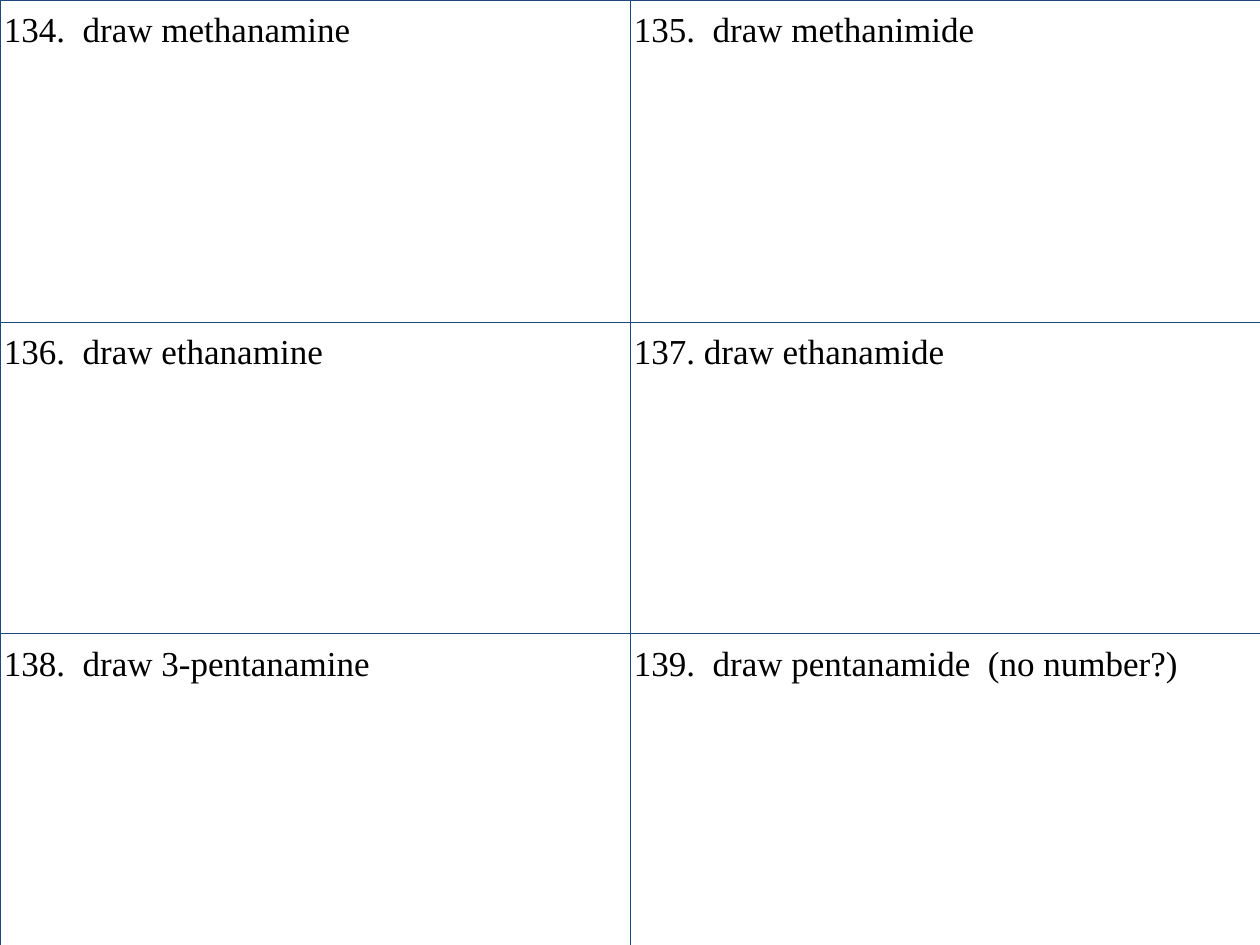
from lxml import etree
from pptx import Presentation
from pptx.dml.color import RGBColor
from pptx.oxml.ns import qn
from pptx.util import Inches, Pt

BLACK = RGBColor(0x00, 0x00, 0x00)
BORDER = RGBColor(0x1F, 0x49, 0x7D)

QUESTIONS = [
    ["134.  draw methanamine", "135.  draw methanimide"],
    ["136.  draw ethanamine", "137. draw ethanamide"],
    ["138.  draw 3-pentanamine", "139.  draw pentanamide  (no number?)"],
]
ROW_HEIGHTS = [2.56, 2.47, 2.47]


def set_borders(cell, color, width):
    tcPr = cell._tc.get_or_add_tcPr()
    for i, side in enumerate(("a:lnL", "a:lnR", "a:lnT", "a:lnB")):
        ln = etree.Element(qn(side), w=str(int(width)))
        fill = etree.SubElement(ln, qn("a:solidFill"))
        etree.SubElement(fill, qn("a:srgbClr"), val=str(color))
        tcPr.insert(i, ln)  # borders come before the cell fill


prs = Presentation()
prs.slide_width = Inches(10)
prs.slide_height = Inches(7.5)
s = prs.slides.add_slide(prs.slide_layouts[6])

table = s.shapes.add_table(3, 2, 0, 0, Inches(10), Inches(7.5)).table
table.first_row = False
table.horz_banding = False
for col in table.columns:
    col.width = Inches(5)

for row, height, questions in zip(table.rows, ROW_HEIGHTS, QUESTIONS):
    row.height = Inches(height)
    for cell, question in zip(row.cells, questions):
        cell.fill.background()
        set_borders(cell, BORDER, Pt(0.5))
        cell.margin_left = cell.margin_right = Inches(0.03)
        cell.margin_top = cell.margin_bottom = Inches(0.03)
        p = cell.text_frame.paragraphs[0]
        p.text = question
        p.line_spacing = 1.19
        p.space_after = Pt(6)
        font = p.runs[0].font
        font.name = "Times New Roman"
        font.size = Pt(20)
        font.color.rgb = BLACK

prs.save("out.pptx")
